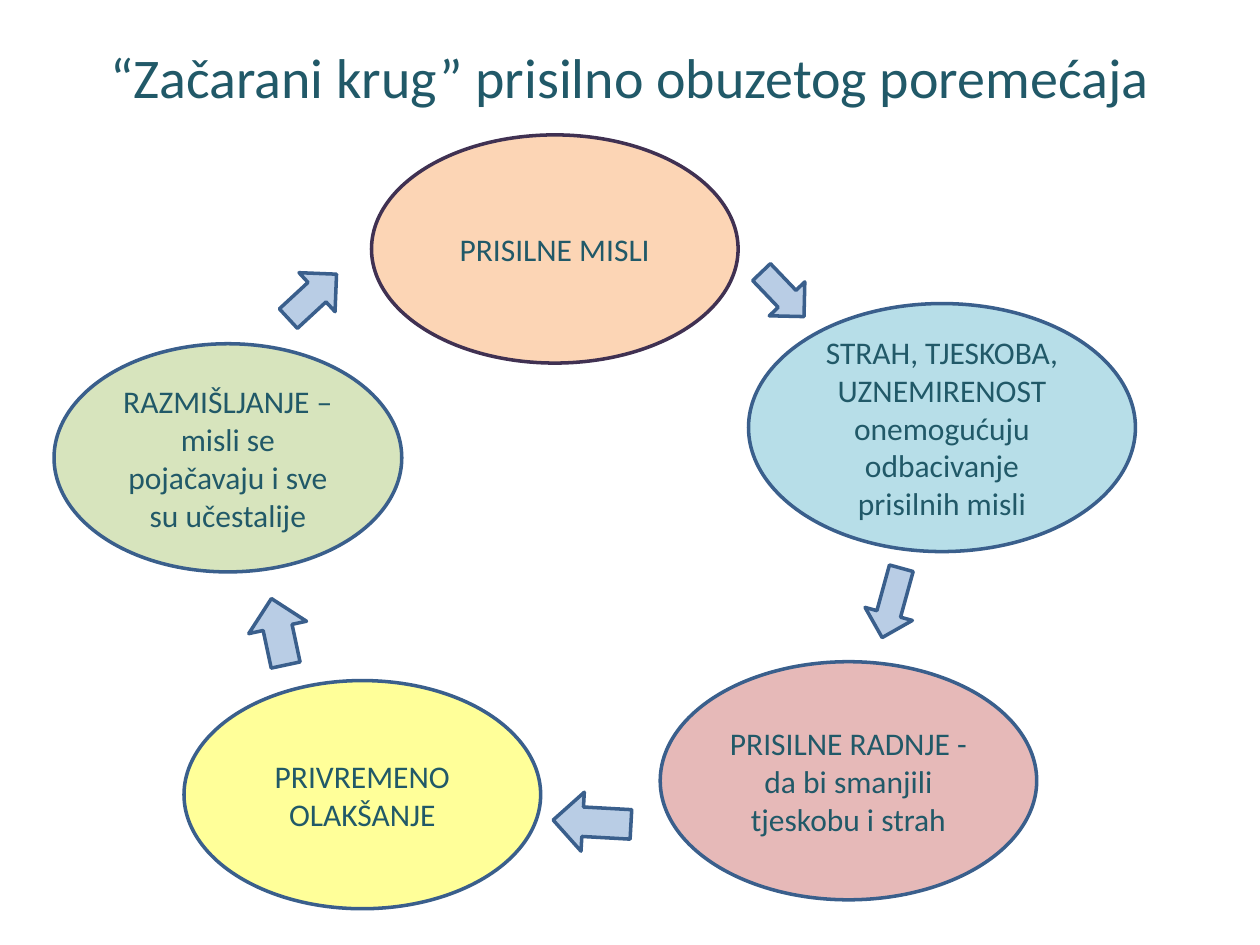
from pptx import Presentation
from pptx.dml.color import RGBColor
from pptx.enum.shapes import MSO_SHAPE
from pptx.enum.text import MSO_ANCHOR, PP_ALIGN
from pptx.util import Cm, Pt

COLORS = {
    "text": "215968",
    "outline": "3A5F8C",
    "dark outline": "403152",
    "arrow": "B9CDE5",
    "peach": "FCD5B5",
    "blue": "B7DEE8",
    "rose": "E6B9B8",
    "yellow": "FFFF99",
    "green": "D7E4BD",
}

TITLE = "“Začarani krug” prisilno obuzetog poremećaja"

# Stages of the circle: paragraphs, fill, outline, (left, top, width, height) in cm
STAGES = [
    (["PRISILNE MISLI"], "peach", "dark outline", (7.49, 2.72, 7.39, 4.6)),
    (["STRAH, TJESKOBA, UZNEMIRENOST onemogućuju odbacivanje prisilnih misli"],
     "blue", "outline", (15.09, 6.12, 7.8, 5)),
    (["PRISILNE RADNJE - da bi smanjili tjeskobu i strah"],
     "rose", "outline", (13.31, 13.34, 7.59, 4.8)),
    (["PRIVREMENO", "OLAKŠANJE"], "yellow", "outline", (3.71, 13.72, 7.19, 4.6)),
    (["RAZMIŠLJANJE – misli se pojačavaju i sve su učestalije"],
     "green", "outline", (1.09, 6.93, 7.01, 4.6)),
]

# Arrows between the stages: rotation in degrees, box in cm
ARROWS = [
    (46.3, (15.16, 5.44, 1.24, 0.99)),
    (105.4, (17.25, 11.66, 1.45, 0.99)),
    (183.2, (11.15, 15.98, 1.57, 1.19)),
    (257.9, (4.93, 12.14, 1.37, 1.19)),
    (317.3, (5.64, 5.44, 1.32, 1.07)),
]

FRAME_FORMAT = {"word_wrap": True, "vertical_anchor": MSO_ANCHOR.MIDDLE}


def color(name):
    return RGBColor.from_string(COLORS[name])


def apply_format(target, values):
    for name, value in values.items():
        setattr(target, name, value)


def write(frame, lines, size):
    apply_format(frame, FRAME_FORMAT)
    for index, line in enumerate(lines):
        paragraph = frame.add_paragraph() if index else frame.paragraphs[0]
        paragraph.alignment = PP_ALIGN.CENTER
        run = paragraph.add_run()
        run.text = line
        apply_format(run.font, {"name": "Calibri", "size": Pt(size)})
        run.font.color.rgb = color("text")


def add_title(slide):
    title = slide.shapes.add_textbox(Cm(1.27), Cm(0.76), Cm(22.86), Cm(1.55))
    write(title.text_frame, [TITLE], 32)


def add_outlined(slide, preset, box, fill, outline):
    figure = slide.shapes.add_shape(preset, *map(Cm, box))
    figure.shadow.inherit = False
    figure.fill.solid()
    figure.fill.fore_color.rgb = color(fill)
    figure.line.color.rgb = color(outline)
    figure.line.width = Pt(2)
    return figure


def add_stage(slide, lines, fill, outline, box):
    stage = add_outlined(slide, MSO_SHAPE.OVAL, box, fill, outline)
    write(stage.text_frame, lines, 18)


def add_arrow(slide, rotation, box):
    arrow = add_outlined(slide, MSO_SHAPE.RIGHT_ARROW, box, "arrow", "outline")
    arrow.rotation = rotation


def main():
    presentation = Presentation()
    apply_format(presentation, {"slide_width": Cm(25.4), "slide_height": Cm(19.05)})
    slide = presentation.slides.add_slide(presentation.slide_layouts[6])

    # Heading
    add_title(slide)

    # Vicious circle, clockwise from the top
    for stage in STAGES:
        add_stage(slide, *stage)
    for arrow in ARROWS:
        add_arrow(slide, *arrow)

    presentation.save("out.pptx")


if __name__ == "__main__":
    main()
